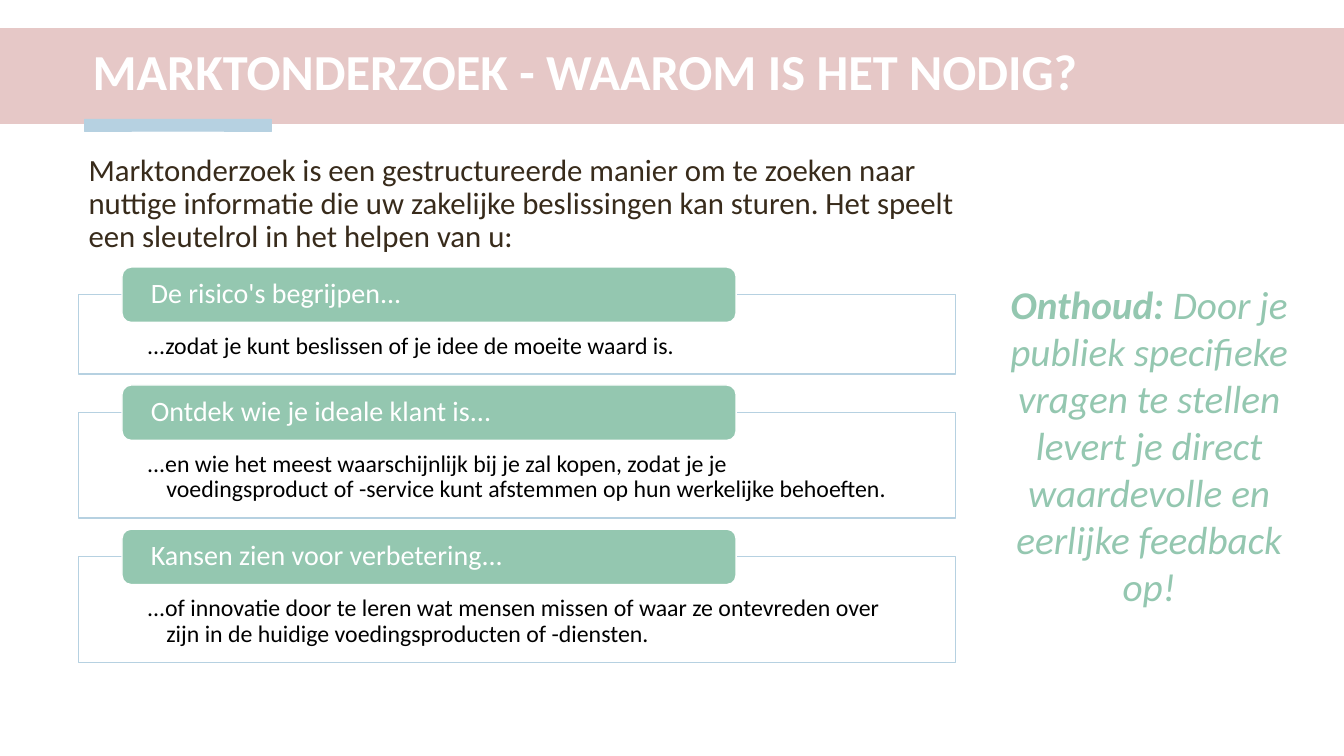
from pptx import Presentation
from pptx.dml.color import RGBColor
from pptx.enum.shapes import MSO_SHAPE as SHAPE
from pptx.enum.text import MSO_ANCHOR as ANCHOR, MSO_AUTO_SIZE as AUTO, PP_ALIGN as ALIGN
from pptx.oxml.ns import qn
from pptx.util import Emu, Inches, Pt
from lxml import etree

W, H = Inches(13.33), Inches(7.5)
FONT = "Calibri"
WHITE, BLACK, BROWN = "FFFFFF", "000000", "382B1B"
PINK, BLUE, GREEN = "E6C8C7", "B6D1E1", "94C7B0"

# Panels, in percent of the slide's width or height
PANEL_LEFT, PANEL_WIDTH, PANEL_TOP, PANEL_GAP = 5.85, 65.25, 38.93, 5.07
TAB_LEFT, TAB_WIDTH, TAB_HEIGHT, TAB_RISE = 9.08, 45.69, 7.33, 3.6
PANELS = [
    ("De risico's begrijpen...",
     "...zodat je kunt beslissen of je idee de moeite waard is.", 10.53),
    ("Ontdek wie je ideale klant is...",
     "...en wie het meest waarschijnlijk bij je zal kopen, zodat je je "
     "voedingsproduct of -service kunt afstemmen op hun werkelijke behoeften.", 14),
    ("Kansen zien voor verbetering...",
     "...of innovatie door te leren wat mensen missen of waar ze ontevreden over "
     "zijn in de huidige voedingsproducten of -diensten.", 14),
]


def rgb(color):
    return RGBColor.from_string(color)


def area(left, top, width, height):
    """Turn percentages of the slide into lengths."""
    return [Emu(round(share * side / 100))
            for share, side in zip((left, top, width, height), (W, H, W, H))]


def format_run(r, size, color, bold=False, italic=False):
    r.font.name, r.font.size = FONT, Pt(size)
    r.font.bold, r.font.italic = bold, italic
    r.font.color.rgb = rgb(color)


def set_text(sp, text, size, color, spacing, bold=False,
             anchor=ANCHOR.TOP, insets=(0.1, 0.05, 0.1, 0.05)):
    tf = sp.text_frame
    tf.word_wrap = True
    tf.vertical_anchor = anchor
    tf.margin_left, tf.margin_top, tf.margin_right, tf.margin_bottom = map(Inches, insets)
    tf.text = text
    p = tf.paragraphs[0]
    p.alignment, p.line_spacing = ALIGN.LEFT, spacing
    format_run(p.runs[0], size, color, bold)
    return p


def add_box(slide, kind, place, fill, line=None, width=1):
    sp = slide.shapes.add_shape(kind, *area(*place))
    sp.shadow.inherit = False
    sp.fill.solid()
    sp.fill.fore_color.rgb = rgb(fill)
    if line:
        sp.line.color.rgb = rgb(line)
        sp.line.width = Pt(width)
    else:
        sp.line.fill.background()
    return sp


def add_label(slide, place, *args, **kwargs):
    sp = slide.shapes.add_textbox(*area(*place))
    return set_text(sp, *args, **kwargs)


def add_panel(slide, top, height, heading, body):
    # Outlined frame, 90 % opaque, with a hanging indent
    frame = add_box(slide, SHAPE.RECTANGLE, (PANEL_LEFT, top, PANEL_WIDTH, height), WHITE, BLUE)
    color = frame.fill._xPr.find(qn("a:solidFill"))[0]
    etree.SubElement(color, qn("a:alpha")).set("val", "90000")
    p = set_text(frame, body, 17, BLACK, 0.9, insets=(0.68, 0.39, 0.68, 0.13))
    p.level = 1
    pPr = p._p.get_or_add_pPr()
    pPr.set("marL", str(Inches(0.19)))
    pPr.set("indent", str(-Inches(0.19)))

    # Heading tab across the frame's top edge
    tab = add_box(slide, SHAPE.ROUNDED_RECTANGLE,
                  (TAB_LEFT, top - TAB_RISE, TAB_WIDTH, TAB_HEIGHT), GREEN, WHITE)
    set_text(tab, heading, 20, WHITE, 0.9, anchor=ANCHOR.MIDDLE, insets=(0.26, 0, 0.26, 0))


def add_reminder(slide):
    sp = slide.shapes.add_textbox(*area(74.05, 36.4, 22.9, 51.6))
    tf = sp.text_frame
    tf.word_wrap, tf.auto_size = True, AUTO.SHAPE_TO_FIT_TEXT
    p = tf.paragraphs[0]
    p.text = ("Onthoud: ")
    r = p.add_run()
    r.text = "Door je publiek specifieke vragen te stellen"
    p.add_line_break()
    r = p.add_run()
    r.text = "levert je direct waardevolle en eerlijke feedback op!"
    p.alignment = ALIGN.CENTER
    for i, r in enumerate(p.runs):
        format_run(r, 28, GREEN, bold=i == 0, italic=True)


def main():
    prs = Presentation()
    prs.slide_width, prs.slide_height = W, H
    slide = prs.slides.add_slide(prs.slide_layouts[6])

    # Title band and accent bar
    add_box(slide, SHAPE.RECTANGLE, (0, 3.73, 100, 12.67), PINK)
    add_box(slide, SHAPE.RECTANGLE, (6.3, 15.73, 13.88, 1.6), BLUE, BLUE, 0.19)
    add_label(slide, (6.15, 4.53, 89.5, 10.53), "MARKTONDERZOEK - WAAROM IS HET NODIG?",
              36, WHITE, 0.9, bold=True, anchor=ANCHOR.MIDDLE)

    # Introduction and reminder
    add_label(slide, (5.85, 19.87, 69.1, 15.07),
              "Marktonderzoek is een gestructureerde manier om te zoeken naar nuttige "
              "informatie die uw zakelijke beslissingen kan sturen. Het speelt een "
              "sleutelrol in het helpen van u:", 22, BROWN, Pt(23.4))
    add_reminder(slide)

    # Stacked panels
    top = PANEL_TOP
    for heading, body, height in PANELS:
        add_panel(slide, top, height, heading, body)
        top += height + PANEL_GAP

    prs.save("out.pptx")


if __name__ == "__main__":
    main()
